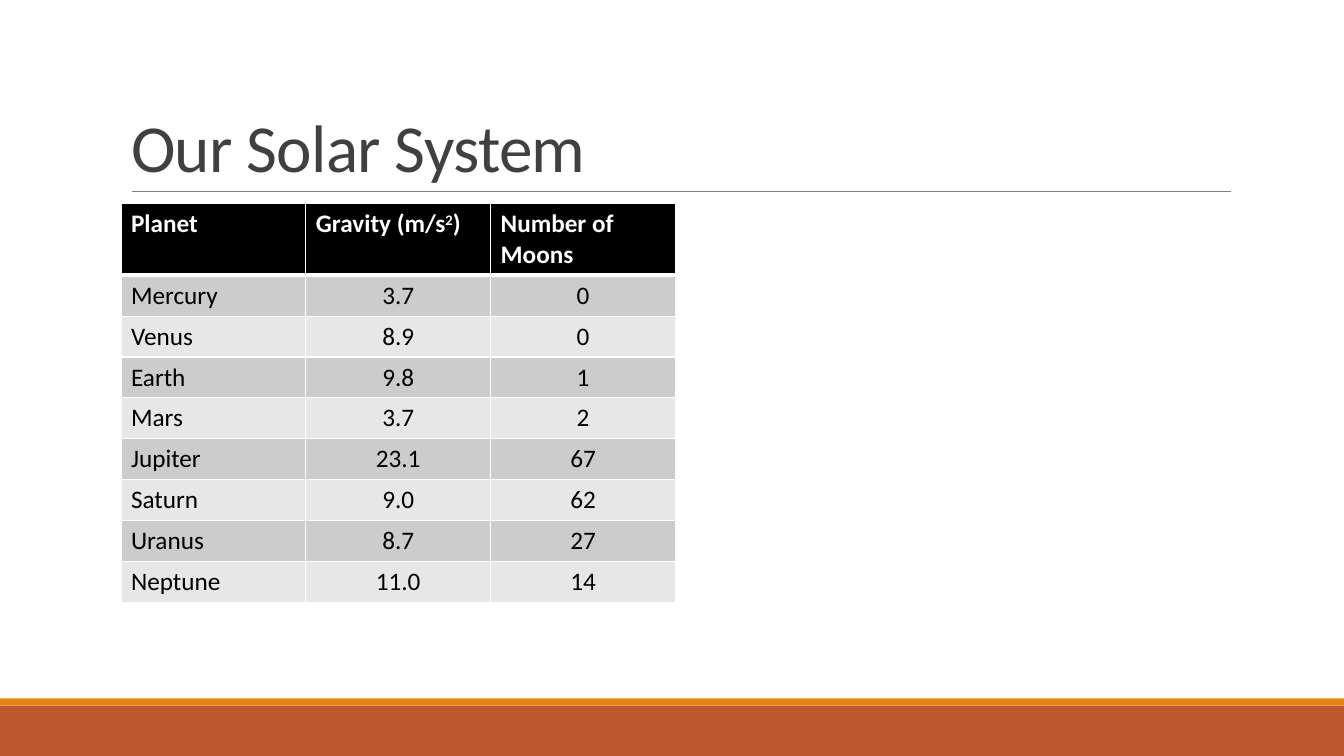
from dataclasses import dataclass

from lxml.etree import SubElement
from pptx import Presentation
from pptx.dml.color import RGBColor
from pptx.enum.shapes import MSO_CONNECTOR, MSO_SHAPE
from pptx.enum.text import MSO_ANCHOR, MSO_AUTO_SIZE, PP_ALIGN
from pptx.oxml.ns import qn
from pptx.slide import Slide
from pptx.table import _Cell
from pptx.text.text import _Run
from pptx.util import Inches, Pt

FONT = "Calibri"
WHITE = RGBColor(0xFF, 0xFF, 0xFF)
BLACK = RGBColor(0x00, 0x00, 0x00)
TITLE_GRAY = RGBColor(0x40, 0x40, 0x40)
RULE_GRAY = RGBColor(0x80, 0x80, 0x80)
RUST = RGBColor(0xBD, 0x58, 0x2C)
ORANGE = RGBColor(0xE4, 0x83, 0x12)
ROW_FILLS = (RGBColor(0xCC, 0xCC, 0xCC), RGBColor(0xE7, 0xE7, 0xE7))

SLIDE_WIDTH, SLIDE_HEIGHT = 13.33, 7.5
TABLE_LEFT, TABLE_TOP, TABLE_WIDTH, TABLE_HEIGHT = 1.2, 2.02, 5.5, 3.94
HEADER_HEIGHT = 0.7


@dataclass(frozen=True)
class Band:
    top: float
    height: float
    color: RGBColor


@dataclass(frozen=True)
class Planet:
    name: str
    gravity: str
    moons: str


BANDS = (Band(7, 0.5, RUST), Band(6.93, 0.07, ORANGE))

# Each heading is a list of spans; the second span is raised
HEADINGS = (("Planet",), ("Gravity (m/s", "2", ")"), ("Number of Moons",))

PLANETS = (
    Planet("Mercury", "3.7", "0"),
    Planet("Venus", "8.9", "0"),
    Planet("Earth", "9.8", "1"),
    Planet("Mars", "3.7", "2"),
    Planet("Jupiter", "23.1", "67"),
    Planet("Saturn", "9.0", "62"),
    Planet("Uranus", "8.7", "27"),
    Planet("Neptune", "11.0", "14"),
)


def format_span(span: _Run, size: float, color: RGBColor, bold: bool = False) -> None:
    span.font.name = FONT
    span.font.size = Pt(size)
    span.font.bold = bold
    span.font.color.rgb = color


def add_band(slide: Slide, band: Band) -> None:
    box = slide.shapes.add_shape(
        MSO_SHAPE.RECTANGLE, 0, Inches(band.top), Inches(SLIDE_WIDTH), Inches(band.height))
    box.shadow.inherit = False
    box.fill.solid()
    box.fill.fore_color.rgb = band.color
    box.line.fill.background()


def add_rule(slide: Slide) -> None:
    rule = slide.shapes.add_connector(
        MSO_CONNECTOR.STRAIGHT, Inches(1.31), Inches(1.9), Inches(12.21), Inches(1.9))
    rule.line.color.rgb = RULE_GRAY
    rule.line.width = Pt(0.5)
    SubElement(rule._element.spPr, qn("a:effectLst"))


def set_title(slide: Slide, text: str) -> None:
    title = slide.shapes.title
    title.left, title.top = Inches(1.2), Inches(0.31)
    title.width, title.height = Inches(11), Inches(1.59)
    frame = title.text_frame
    frame.text = text
    frame.word_wrap = True
    frame.auto_size = MSO_AUTO_SIZE.NONE
    frame.vertical_anchor = MSO_ANCHOR.BOTTOM
    para = frame.paragraphs[0]
    para.alignment = PP_ALIGN.LEFT
    para.line_spacing = 0.85
    span = para.runs[0]
    format_span(span, 48, TITLE_GRAY)
    span._r.get_or_add_rPr().set("spc", "-50")


def style_cell(cell: _Cell, fill: RGBColor, top: float = 1, bottom: float = 1) -> None:
    properties = cell._tc.get_or_add_tcPr()
    for side, width in (("L", 1), ("R", 1), ("T", top), ("B", bottom)):
        border = SubElement(properties, qn(f"a:ln{side}"), w=str(Pt(width)))
        solid = SubElement(border, qn("a:solidFill"))
        SubElement(solid, qn("a:srgbClr"), val=str(WHITE))
    cell.fill.solid()
    cell.fill.fore_color.rgb = fill


def add_planet_table(slide: Slide) -> None:
    table = slide.shapes.add_table(
        len(PLANETS) + 1, len(HEADINGS), Inches(TABLE_LEFT), Inches(TABLE_TOP),
        Inches(TABLE_WIDTH), Inches(TABLE_HEIGHT)).table
    for column in table.columns:
        column.width = Inches(TABLE_WIDTH / len(HEADINGS))
    for row in table.rows:
        row.height = Inches((TABLE_HEIGHT - HEADER_HEIGHT) / len(PLANETS))
    table.rows[0].height = Inches(HEADER_HEIGHT)

    # Heading row
    for column_index, texts in enumerate(HEADINGS):
        cell = table.cell(0, column_index)
        style_cell(cell, BLACK, bottom=3)
        para = cell.text_frame.paragraphs[0]
        for span_index, text in enumerate(texts):
            span = para.add_run()
            span.text = text
            format_span(span, 18, WHITE, bold=True)
            if span_index == 1:
                span._r.get_or_add_rPr().set("baseline", "30000")

    # Planet rows
    for row_index, planet in enumerate(PLANETS, start=1):
        for column_index, text in enumerate((planet.name, planet.gravity, planet.moons)):
            cell = table.cell(row_index, column_index)
            style_cell(cell, ROW_FILLS[(row_index - 1) % 2], top=3 if row_index == 1 else 1)
            para = cell.text_frame.paragraphs[0]
            para.text = text
            para.alignment = PP_ALIGN.CENTER if column_index else PP_ALIGN.LEFT
            format_span(para.runs[0], 18, BLACK)


def main() -> None:
    deck = Presentation()
    deck.slide_width, deck.slide_height = Inches(SLIDE_WIDTH), Inches(SLIDE_HEIGHT)
    slide = deck.slides.add_slide(deck.slide_layouts[5])
    for band in BANDS:
        add_band(slide, band)
    add_rule(slide)
    set_title(slide, "Our Solar System")
    add_planet_table(slide)
    deck.save("out.pptx")


if __name__ == "__main__":
    main()
